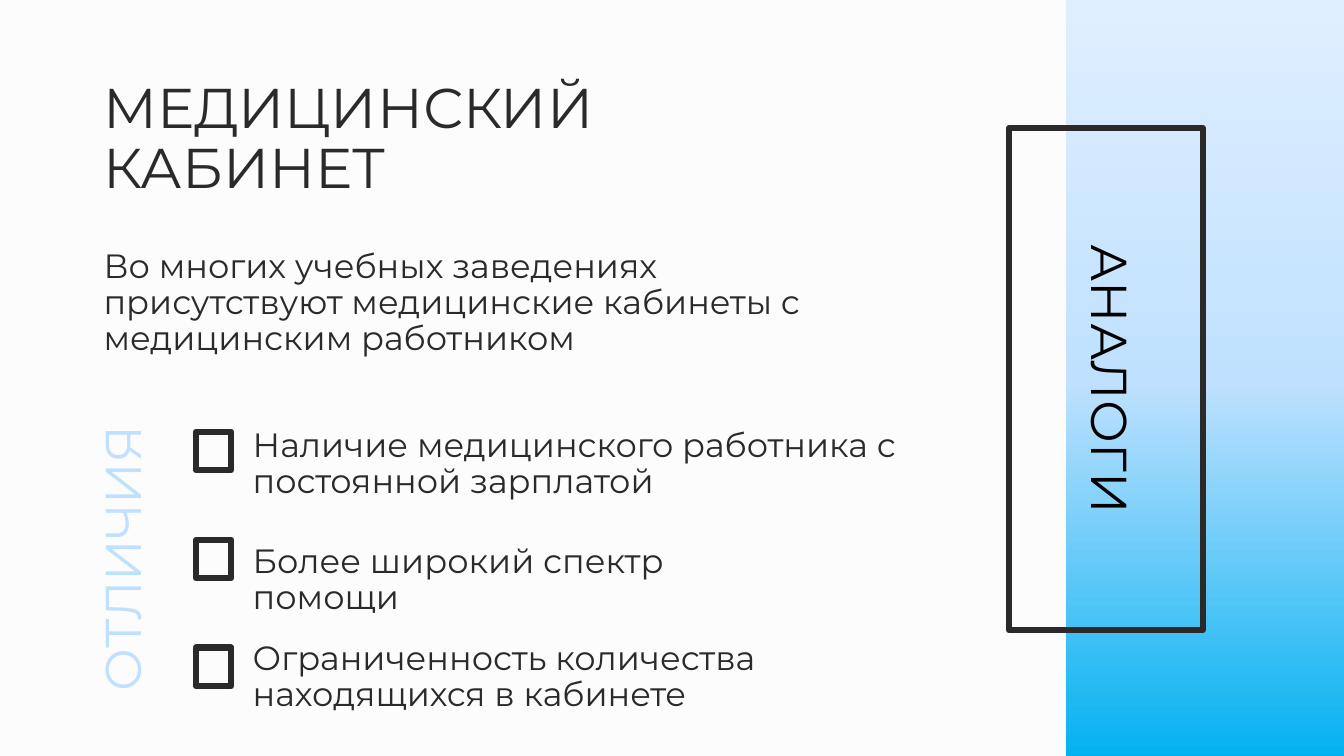
import copy

import pptx
import pptx.dml.color
import pptx.enum.shapes
import pptx.enum.text
import pptx.util
from pptx.util import Cm

INK = "2B2A29"
SKY = "BFE1FF"
BAND_COLOURS = ["00B0F0", SKY, "E0EFFF"]  # bottom to top

CHECKLIST = [  # text, top, width
    ("Наличие медицинского работника с постоянной зарплатой", 10.67, 19.1),
    ("Более широкий спектр помощи", 13.59, 14.5),
    ("Ограниченность количества находящихся в кабинете", 16.03, 14.7),
]
FIRST_CHECKBOX_TOP = 10.88
CHECKBOX_STEP = 2.72


def rgb(colour):
    return pptx.dml.color.RGBColor.from_string(colour)


def add_rectangle(slide, left, top, width, height):
    rectangle = slide.shapes.add_shape(
        pptx.enum.shapes.MSO_SHAPE.RECTANGLE, Cm(left), Cm(top), Cm(width), Cm(height))
    rectangle.shadow.inherit = False
    return rectangle


def add_frame(slide, left, top, width, height):
    """Add a hollow rectangle with a thick dark outline."""
    frame = add_rectangle(slide, left, top, width, height)
    frame.fill.background()
    frame.line.color.rgb = rgb(INK)
    frame.line.width = pptx.util.Pt(4.5)


def add_gradient_band(slide, left, top, width, height):
    """Add a borderless rectangle with evenly spaced colours from bottom to top."""
    band = add_rectangle(slide, left, top, width, height)
    band.line.fill.background()
    band.fill.gradient()
    band.fill.gradient_angle = 90
    stop_list = band.fill._fill._gradFill.gsLst
    stop_list.insert(1, copy.deepcopy(stop_list[0]))
    for index, (stop, colour) in enumerate(zip(band.fill.gradient_stops, BAND_COLOURS)):
        stop.position = index / (len(BAND_COLOURS) - 1)
        stop.color.rgb = rgb(colour)


def add_text(slide, text, left, top, width, height, size=24, colour=INK, middle=False):
    box = slide.shapes.add_textbox(Cm(left), Cm(top), Cm(width), Cm(height))
    box.text_frame.word_wrap = True
    if middle:
        box.text_frame.vertical_anchor = pptx.enum.text.MSO_ANCHOR.MIDDLE
    paragraph = box.text_frame.paragraphs[0]
    paragraph.text = text
    paragraph.line_spacing = 0.9
    paragraph.font.name = "Montserrat"
    paragraph.font.size = pptx.util.Pt(size)
    paragraph.font.color.rgb = rgb(colour)
    return box


def add_turned_label(slide, text, left, top, width, height, colour, rotation):
    label = add_text(slide, text, left, top, width, height, 36, colour, middle=True)
    label.text_frame.paragraphs[0].alignment = pptx.enum.text.PP_ALIGN.CENTER
    label.rotation = rotation


def main():
    presentation = pptx.Presentation()
    presentation.slide_width = Cm(33.87)
    presentation.slide_height = Cm(19.05)
    slide = presentation.slides.add_slide(presentation.slide_layouts[6])
    slide.background.fill.solid()
    slide.background.fill.fore_color.rgb = rgb("FCFCFC")

    add_gradient_band(slide, 26.87, 0, 7, 19.3)
    add_frame(slide, 25.43, 3.23, 4.88, 12.65)
    add_turned_label(slide, "АНАЛОГИ", 21.59, 7.11, 12.65, 4.88, "000000", 90)

    add_text(slide, "МЕДИЦИНСКИЙ КАБИНЕТ", 2.36, 2.45, 16.64, 2.18, size=40, middle=True)
    add_text(slide, "Во многих учебных заведениях присутствуют медицинские кабинеты "
             "с медицинским работником", 2.36, 6.15, 18.21, 3.02)

    add_turned_label(slide, "ОТЛИЧИЯ", -0.58, 12.57, 7.47, 3, SKY, 270)
    for index, (difference, top, width) in enumerate(CHECKLIST):
        add_frame(slide, 4.94, FIRST_CHECKBOX_TOP + index * CHECKBOX_STEP, 0.89, 0.97)
        add_text(slide, difference, 6.12, top, width, 2.11)

    presentation.save("out.pptx")


if __name__ == "__main__":
    main()
